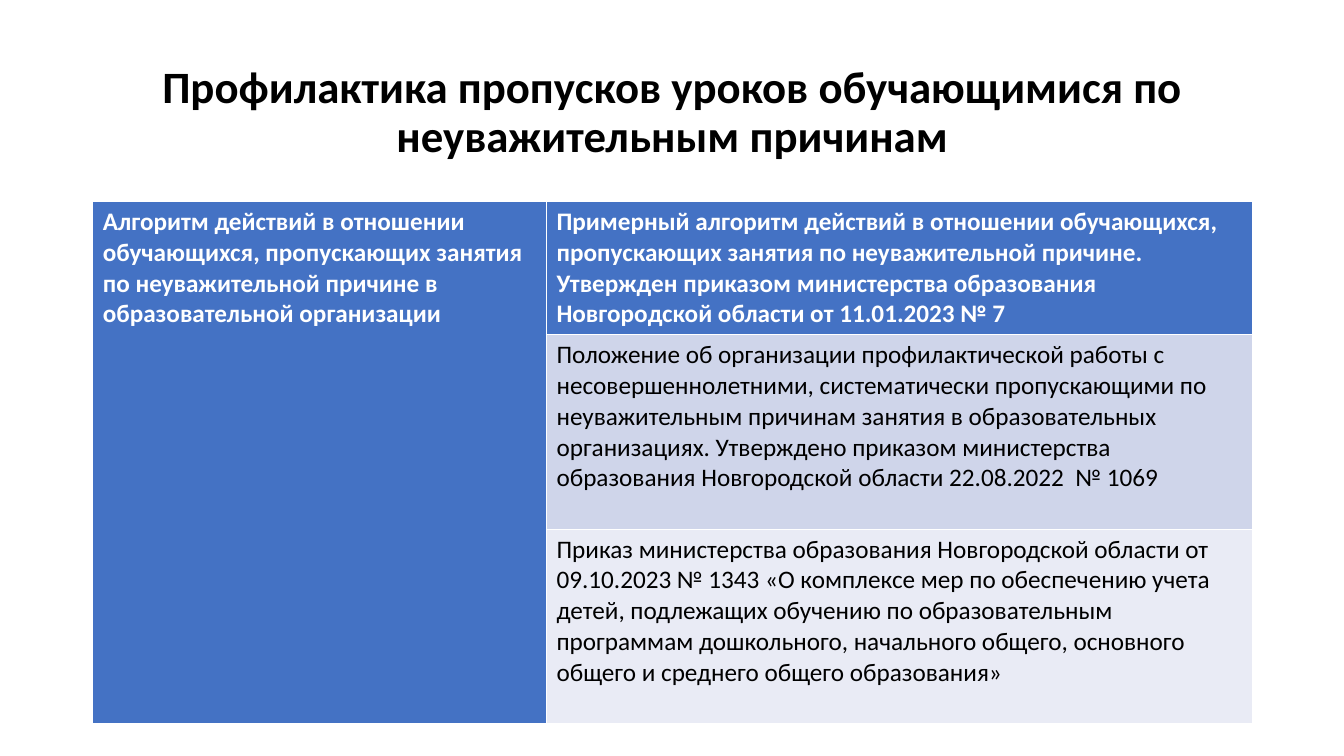
import pptx
import pptx.util
import pptx.dml.color
import pptx.enum.text

Inches, Pt = pptx.util.Inches, pptx.util.Pt
RGBColor = pptx.dml.color.RGBColor

BLACK = RGBColor(0x00, 0x00, 0x00)
WHITE = RGBColor(0xFF, 0xFF, 0xFF)
BLUE = RGBColor(0x44, 0x72, 0xC4)
BAND_DARK = RGBColor(0xCF, 0xD5, 0xEA)
BAND_LIGHT = RGBColor(0xE9, 0xEB, 0xF5)

SLIDE_W, SLIDE_H = 13.33, 7.5
MARGIN = 0.92
CONTENT_W = 11.5
TITLE_BOX = (MARGIN, 0.4, CONTENT_W, 1.45)
TABLE_BOX = (MARGIN, 2, CONTENT_W, 5.17)
COLUMN_SHARES = (4.5 / 11.5, 7 / 11.5)
ROW_SHARES = (0.254, 0.373, 0.373)

TITLE = "Профилактика пропусков уроков обучающимися по неуважительным причинам"
ALGORITHM = (
    "Алгоритм действий в отношении обучающихся, пропускающих занятия "
    "по неуважительной причине в образовательной организации"
)
DOCUMENTS = (
    "Примерный алгоритм действий в отношении обучающихся, пропускающих занятия "
    "по неуважительной причине. Утвержден приказом министерства образования "
    "Новгородской области от 11.01.2023 № 7",
    "Положение об организации профилактической работы с несовершеннолетними, "
    "систематически пропускающими по неуважительным причинам занятия "
    "в образовательных организациях. Утверждено приказом министерства "
    "образования Новгородской области 22.08.2022  № 1069",
    "Приказ министерства образования Новгородской области от 09.10.2023 № 1343 "
    "«О комплексе мер по обеспечению учета детей, подлежащих обучению "
    "по образовательным программам дошкольного, начального общего, основного "
    "общего и среднего общего образования»",
)

TITLE_FONT = {"name": "Calibri", "size": Pt(32), "bold": True}
HEADER_FONT = {"name": "Calibri", "size": Pt(18), "bold": True}
BODY_FONT = {**HEADER_FONT, "bold": False}
HEADER_STYLE = (BLUE, HEADER_FONT, WHITE)
DOCUMENT_STYLES = (
    HEADER_STYLE,
    (BAND_DARK, BODY_FONT, BLACK),
    (BAND_LIGHT, BODY_FONT, BLACK),
)


def write(p, text, font, color):
    r = p.add_run()
    r.text = text
    for name, value in font.items():
        setattr(r.font, name, value)
    r.font.color.rgb = color


def add_title(slide, box):
    sp = slide.shapes.title
    sp.left, sp.top, sp.width, sp.height = map(Inches, box)
    tf = sp.text_frame
    tf.word_wrap = True
    tf.vertical_anchor = pptx.enum.text.MSO_ANCHOR.MIDDLE
    p = tf.paragraphs[0]
    p.alignment = pptx.enum.text.PP_ALIGN.CENTER
    p.line_spacing = 0.9
    write(p, TITLE, TITLE_FONT, BLACK)


def fill_cell(cell, text, style):
    background, font, color = style
    cell.fill.solid()
    cell.fill.fore_color.rgb = background
    write(cell.text_frame.paragraphs[0], text, font, color)


def add_documents_table(slide, box):
    """Place one tall cell on the left and a row per document on the right."""
    width, height = box[2:]
    table = slide.shapes.add_table(
        len(ROW_SHARES), len(COLUMN_SHARES), *map(Inches, box)
    ).table
    for column, share in zip(table.columns, COLUMN_SHARES):
        column.width = Inches(width * share)
    for row, share in zip(table.rows, ROW_SHARES):
        row.height = Inches(height * share)

    table.cell(0, 0).merge(table.cell(len(ROW_SHARES) - 1, 0))
    fill_cell(table.cell(0, 0), ALGORITHM, HEADER_STYLE)
    for i, (text, style) in enumerate(zip(DOCUMENTS, DOCUMENT_STYLES)):
        fill_cell(table.cell(i, 1), text, style)


def main():
    prs = pptx.Presentation()
    prs.slide_width, prs.slide_height = Inches(SLIDE_W), Inches(SLIDE_H)
    slide = prs.slides.add_slide(prs.slide_layouts.get_by_name("Title Only"))
    add_title(slide, TITLE_BOX)
    add_documents_table(slide, TABLE_BOX)
    prs.save("out.pptx")


if __name__ == "__main__":
    main()
